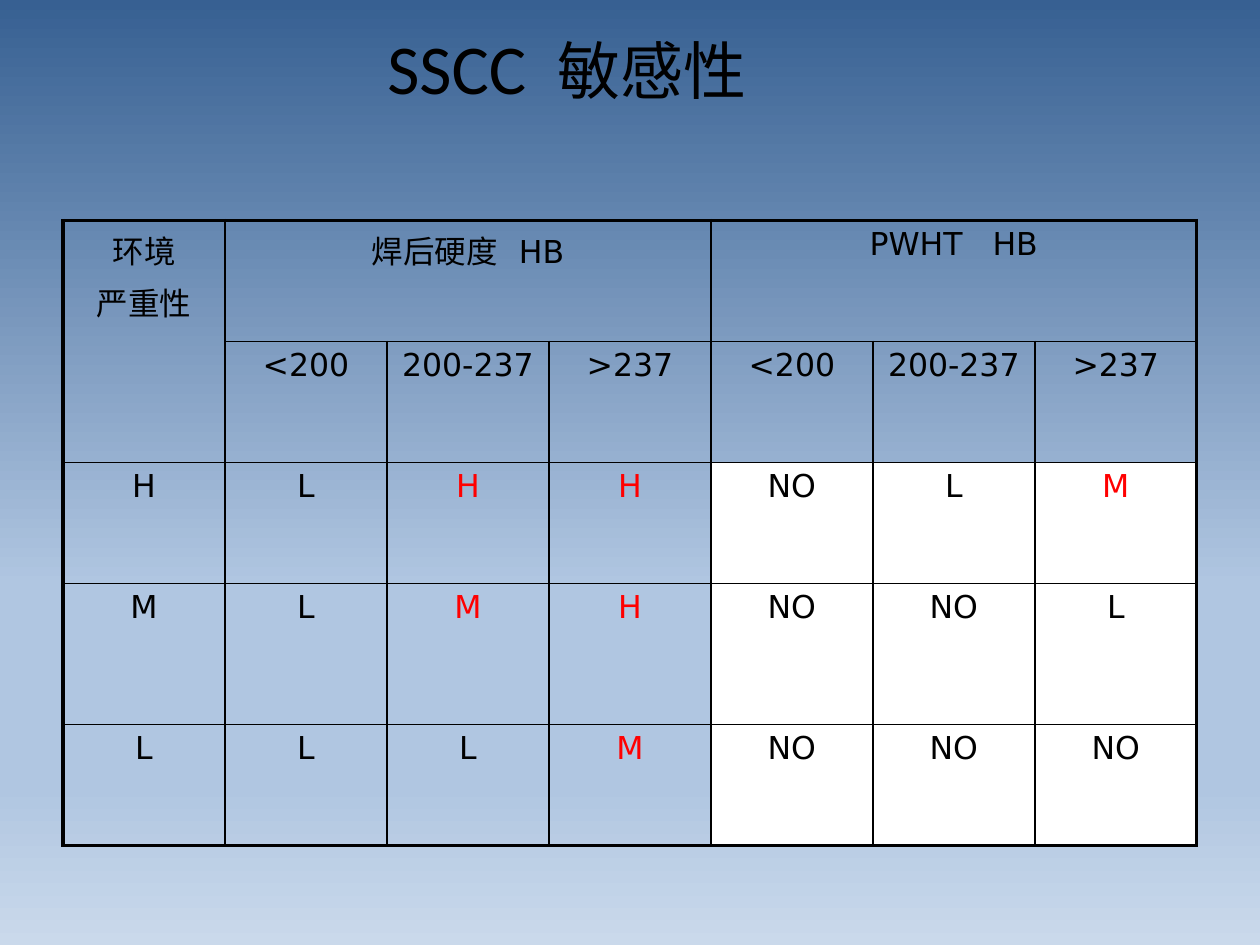
from pptx import Presentation
from pptx.dml.color import RGBColor
from pptx.enum.text import MSO_ANCHOR as Anchor, PP_ALIGN as Align
from pptx.oxml.ns import qn
from pptx.util import Inches, Pt
from lxml.etree import SubElement as Sub

BLACK, RED, WHITE = "000000", "FF0000", "FFFFFF"
STOPS = [(0, "376092"), (62, "B0C6E1"), (83, "B0C6E1"), (100, "CAD9EB")]
MERGES = [((0, 0), (1, 0)), ((0, 1), (0, 3)), ((0, 4), (0, 6))]
HARD = ["<200", "200-237", ">237"]
ROWS = [
    ["环境\n严重性", "焊后硬度   HB", "", "", "PWHT   HB", "", ""],
    [""] + HARD * 2,
    ["H", "L", "H", "H", "NO", "L", "M"],
    ["M", "L", "M", "H", "NO", "NO", "L"],
    ["L", "L", "L", "M", "NO", "NO", "NO"],
]
HEIGHTS = [0.96, 0.96, 0.96, 1.12, 0.96]


def color(code):
    return RGBColor.from_string(code)


def style(run, size, face, tint):
    font = run.font
    font.size, font.name, font.bold = Pt(size), face, False
    font.color.rgb = color(tint)
    Sub(run._r.get_or_add_rPr(), qn("a:ea"), typeface="Noto Sans CJK SC")


def stop(stops, place, tint):
    mark = Sub(stops, qn("a:gs"), pos=str(place * 1000))
    Sub(mark, qn("a:srgbClr"), val=tint)


def backdrop(slide):
    fill = slide.background.fill
    fill.gradient()
    fill.gradient_angle = 270
    stops = next(slide.background._cSld.iter(qn("a:gsLst")))
    for old in list(stops):
        stops.remove(old)
    for place, tint in STOPS:
        stop(stops, place, tint)


def heading(slide, left, top, width, height):
    title = slide.shapes.title
    title.left, title.top = Inches(left), Inches(top)
    title.width, title.height = Inches(width), Inches(height)
    frame = title.text_frame
    frame.vertical_anchor = Anchor.MIDDLE
    para = frame.paragraphs[0]
    para.alignment = Align.CENTER
    for text, size, face in [("SSCC  ", 40, "Calibri"),
                             ("敏感性", 36, "Noto Sans CJK SC")]:
        run = para.add_run()
        run.text = text
        style(run, size, face, BLACK)


def border(cell, side, width):
    line = Sub(cell._tc.get_or_add_tcPr(), qn("a:ln" + side), w=str(Pt(width)))
    Sub(Sub(line, qn("a:solidFill")), qn("a:srgbClr"), val=BLACK)


def frame_cell(cell, row, col):
    edges = {
        "L": col == 0,
        "R": col + cell.span_width == len(ROWS[0]),
        "T": row == 0,
        "B": row + cell.span_height == len(ROWS),
    }
    for side, outer in edges.items():
        border(cell, side, 2.25 if outer else 1)


def fill_cell(cell, text, row, col):
    frame_cell(cell, row, col)
    if row > 1 and col > 3:
        cell.fill.solid()
        cell.fill.fore_color.rgb = color(WHITE)
    else:
        cell.fill.background()
    risk = row > 1 and col > 0 and text in ("H", "M")
    cell.text_frame.text = text
    for spot, para in enumerate(cell.text_frame.paragraphs):
        para.alignment = Align.CENTER
        if spot:
            para.space_before = Pt(3.6)
        for run in para.runs:
            style(run, 18, "DejaVu Sans", RED if risk else BLACK)


def grid(slide, left, top, width, height):
    count = len(ROWS[0])
    table = slide.shapes.add_table(
        len(ROWS), count, Inches(left), Inches(top),
        Inches(width), Inches(height)).table
    table.first_row = table.horz_banding = False
    for col in table.columns:
        col.width = Inches(width / count)
    for row, tall in zip(table.rows, HEIGHTS):
        row.height = Inches(tall)
    for start, end in MERGES:
        table.cell(*start).merge(table.cell(*end))
    for row, texts in enumerate(ROWS):
        for col, text in enumerate(texts):
            fill_cell(table.cell(row, col), text, row, col)


def main():
    deck = Presentation()
    deck.slide_width, deck.slide_height = Inches(10), Inches(7.5)
    slide = deck.slides.add_slide(deck.slide_layouts[5])
    backdrop(slide)
    heading(slide, 0, -0.1, 9, 1.25)
    grid(slide, 0.5, 1.75, 9, sum(HEIGHTS))
    deck.save("out.pptx")


if __name__ == "__main__":
    main()
